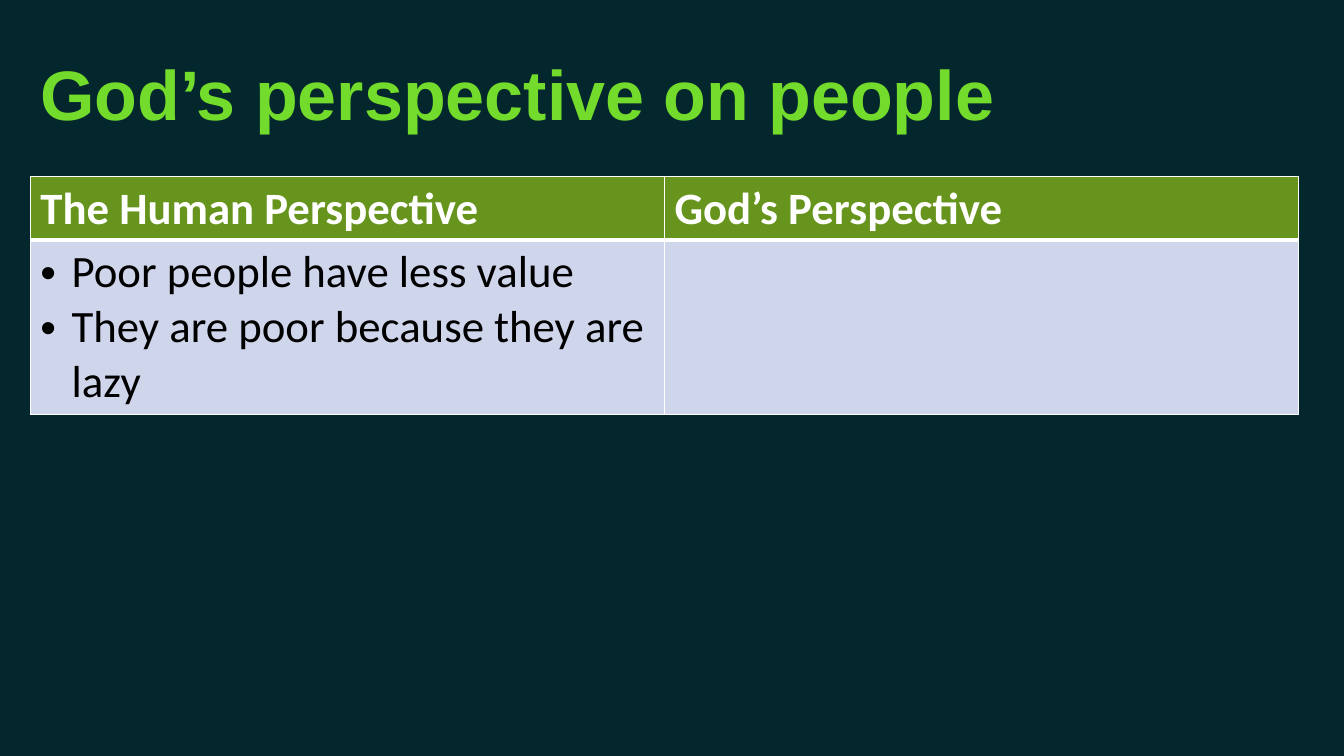
from lxml.etree import SubElement
from pptx import Presentation
from pptx.dml.color import RGBColor
from pptx.enum.text import MSO_ANCHOR
from pptx.oxml.ns import qn
from pptx.util import Inches, Pt

WIDTH, HEIGHT = 13.33, 7.5
LEFT, SPAN = 0.3, 12.58
TITLE = {"name": "Arial", "size": Pt(50), "bold": True}
HEADER = {"name": "Calibri", "size": Pt(32), "bold": True}
BODY = {**HEADER, "bold": False}
HEADINGS = ["The Human Perspective", "God’s Perspective"]
HUMAN_VIEW = ["Poor people have less value", "They are poor because they are lazy"]


def rgb(value):
    return RGBColor.from_string(value)


def write(p, text, style, color):
    p.text = text
    font = p.runs[0].font
    for key, value in style.items():
        setattr(font, key, value)
    font.color.rgb = rgb(color)


def add_bullet(p):
    pPr = p._p.get_or_add_pPr()
    pPr.set("marL", str(Inches(0.31)))
    pPr.set("indent", str(-Inches(0.31)))
    SubElement(pPr, qn("a:buFont"), typeface="Arial")
    SubElement(pPr, qn("a:buChar"), char="•")


def set_borders(cell, widths):
    tcPr = cell._tc.get_or_add_tcPr()
    for side, width in widths.items():
        ln = SubElement(tcPr, qn(f"a:ln{side}"), w=str(Pt(width)))
        fill = SubElement(ln, qn("a:solidFill"))
        SubElement(fill, qn("a:srgbClr"), val="FFFFFF")


def fill_cell(cell, lines, style, color, background, top, bottom, bulleted):
    set_borders(cell, {"L": 1, "R": 1, "T": top, "B": bottom})
    cell.fill.solid()
    cell.fill.fore_color.rgb = rgb(background)
    tf = cell.text_frame
    for i, line in enumerate(lines):
        p = tf.add_paragraph() if i else tf.paragraphs[0]
        if bulleted:
            add_bullet(p)
        write(p, line, style, color)


def add_title(s, text):
    sp = s.shapes.add_textbox(*map(Inches, (LEFT, 0.15, SPAN, 1.45)))
    tf = sp.text_frame
    tf.word_wrap = True
    tf.vertical_anchor = MSO_ANCHOR.MIDDLE
    tf.margin_top = Inches(0.13)
    write(tf.paragraphs[0], text, TITLE, "72DB2B")


def add_comparison(s, headings, views):
    heights = [0.63, 1.73]
    frame = s.shapes.add_table(2, len(headings), *map(Inches, (LEFT, 1.75, SPAN, sum(heights))))
    table = frame.table
    for row, height in zip(table.rows, heights):
        row.height = Inches(height)
    for col, (heading, view) in enumerate(zip(headings, views)):
        table.columns[col].width = Inches(SPAN / len(headings))
        fill_cell(table.cell(0, col), [heading], HEADER, "FFFFFF", "66941C", 1, 3, False)
        fill_cell(table.cell(1, col), view, BODY, "000000", "CFD5EA", 3, 1, True)


def main():
    prs = Presentation()
    prs.slide_width, prs.slide_height = Inches(WIDTH), Inches(HEIGHT)
    s = prs.slides.add_slide(prs.slide_layouts[6])
    s.background.fill.solid()
    s.background.fill.fore_color.rgb = rgb("03272D")
    add_title(s, "God’s perspective on people")
    add_comparison(s, HEADINGS, [HUMAN_VIEW, []])
    prs.save("out.pptx")


if __name__ == "__main__":
    main()
